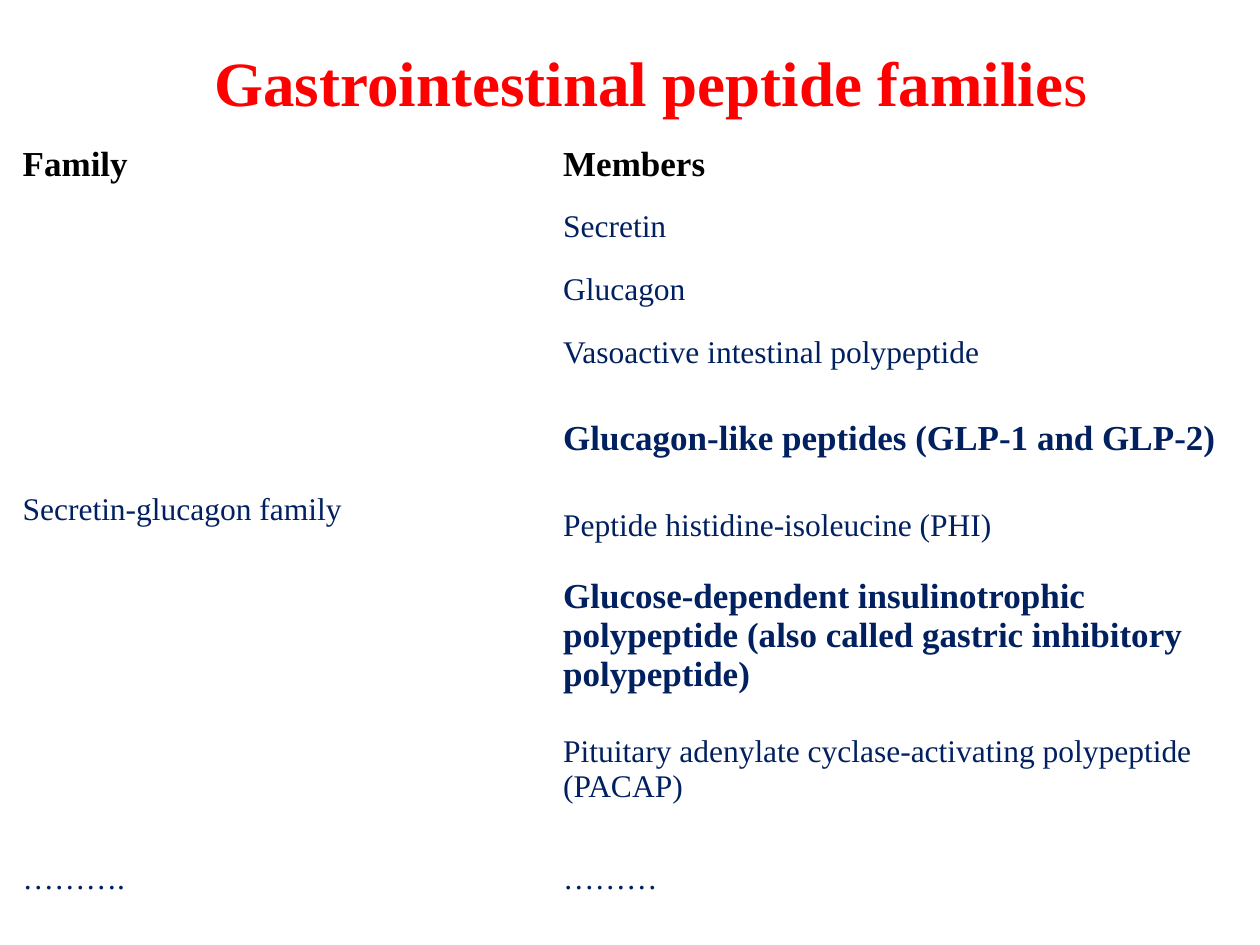
from dataclasses import dataclass
from typing import Any

import pptx
import pptx.dml.color
import pptx.enum.text
import pptx.util

Inches = pptx.util.Inches
FONT = "Times New Roman"
COLORS = {"title": "FF0000", "header": "000000", "body": "002060"}


@dataclass
class Style:
    size: int
    color: str
    bold: bool = False


@dataclass
class Member:
    text: str
    height: float
    style: Style


TITLE = Style(36, "title", True)
TITLE_END = Style(36, "title")
HEADER = Style(20, "header", True)
BODY = Style(18, "body")
STRONG = Style(20, "body", True)

MEMBERS = [
    Member("Secretin", 0.5, BODY),
    Member("Glucagon", 0.5, BODY),
    Member("Vasoactive intestinal polypeptide", 0.5, BODY),
    Member("Glucagon-like peptides (GLP-1 and GLP-2)", 0.87, STRONG),
    Member("Peptide histidine-isoleucine (PHI)", 0.5, BODY),
    Member("Glucose-dependent insulinotrophic polypeptide "
           "(also called gastric inhibitory polypeptide)", 1.25, STRONG),
    Member("Pituitary adenylate cyclase-activating polypeptide (PACAP)", 0.87, BODY),
]
ROWS = [Member("Members", 0.48, HEADER), *MEMBERS, Member("………", 0.87, BODY)]
COLUMNS = [4.29, 5.51]


def add_run(p: Any, text: str, style: Style) -> None:
    r = p.add_run()
    r.text = text
    font = {"name": FONT, "size": pptx.util.Pt(style.size), "bold": style.bold}
    for name, value in font.items():
        setattr(r.font, name, value)
    r.font.color.rgb = pptx.dml.color.RGBColor.from_string(COLORS[style.color])


def fill_cell(cell: Any, text: str, style: Style) -> None:
    cell.vertical_anchor = pptx.enum.text.MSO_ANCHOR.MIDDLE
    add_run(cell.text_frame.paragraphs[0], text, style)


def add_title(s: Any) -> None:
    sp = s.shapes.add_textbox(Inches(0.67), Inches(0.02), Inches(9), Inches(1.25))
    tf = sp.text_frame
    frame = {"word_wrap": True, "vertical_anchor": pptx.enum.text.MSO_ANCHOR.MIDDLE}
    for name, value in frame.items():
        setattr(tf, name, value)
    p = tf.paragraphs[0]
    p.alignment = pptx.enum.text.PP_ALIGN.CENTER
    add_run(p, "Gastrointestinal peptide familie", TITLE)
    add_run(p, "s", TITLE_END)


def add_family_table(s: Any) -> None:
    height = sum(row.height for row in ROWS)
    table = s.shapes.add_table(len(ROWS), len(COLUMNS), Inches(0.08), Inches(1.07),
                               Inches(sum(COLUMNS)), Inches(height)).table
    table.first_row = table.horz_banding = False
    for column, width in zip(table.columns, COLUMNS):
        column.width = Inches(width)
    for cell in table.iter_cells():
        cell.fill.background()

    # Members column
    for i, row in enumerate(ROWS):
        table.rows[i].height = Inches(row.height)
        fill_cell(table.cell(i, 1), row.text, row.style)

    # Family column: one cell spans all members
    last = len(MEMBERS)
    table.cell(1, 0).merge(table.cell(last, 0))
    fill_cell(table.cell(0, 0), "Family", HEADER)
    fill_cell(table.cell(1, 0), "Secretin-glucagon family", BODY)
    fill_cell(table.cell(last + 1, 0), "……….", BODY)


def main() -> None:
    prs = pptx.Presentation()
    prs.slide_width, prs.slide_height = Inches(10), Inches(7.5)
    s = prs.slides.add_slide(prs.slide_layouts[6])
    add_title(s)
    add_family_table(s)
    prs.save("out.pptx")


if __name__ == "__main__":
    main()
